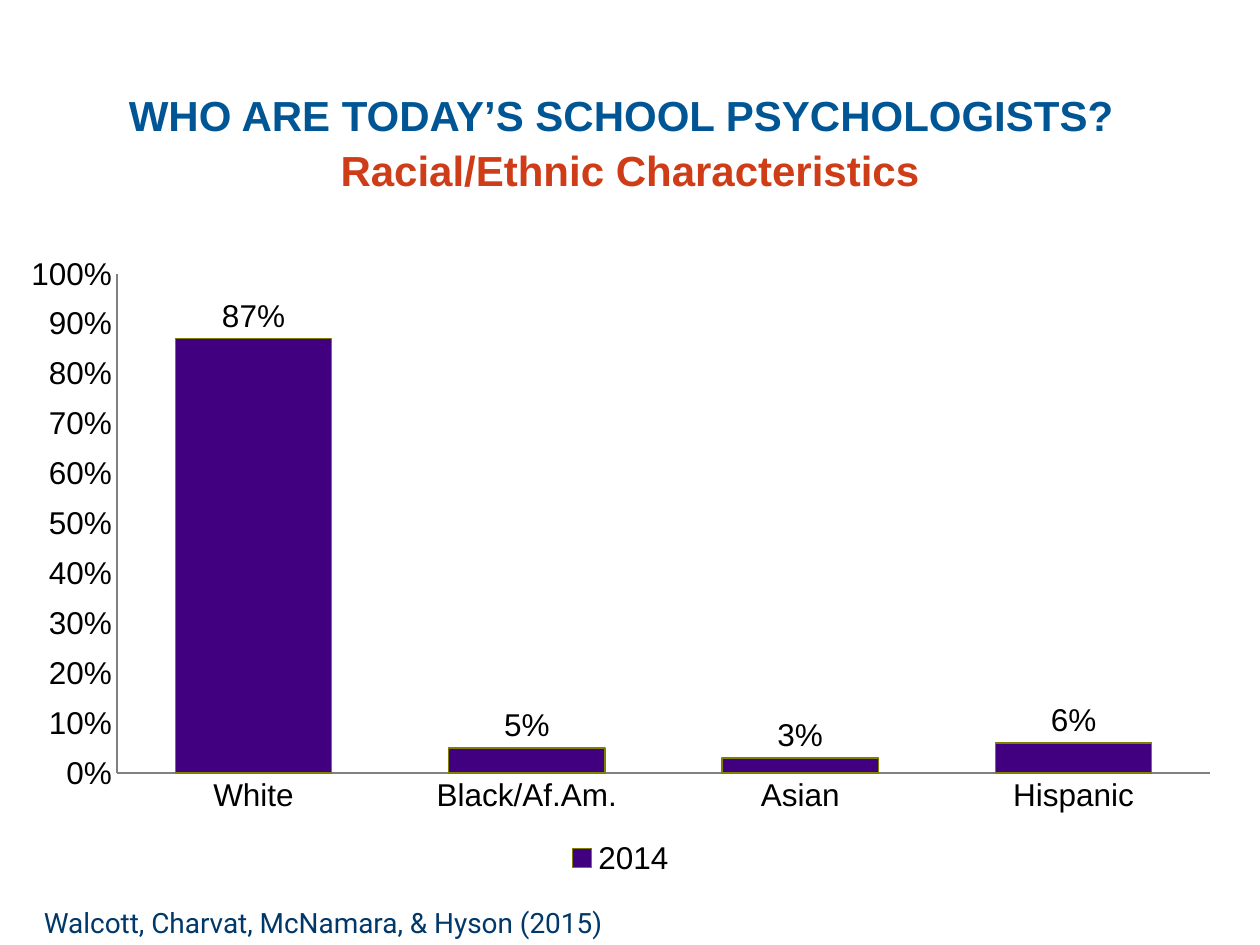
from lxml import etree
from pptx import Presentation
from pptx.chart.data import CategoryChartData
from pptx.dml.color import RGBColor
from pptx.enum import chart as c, text as t
from pptx.oxml import ns
from pptx.util import Inches, Pt

BLUE = RGBColor(0x00, 0x56, 0x95)
ORANGE = RGBColor(0xCE, 0x3C, 0x18)
NAVY = RGBColor(0x00, 0x38, 0x6A)
PURPLE = RGBColor(0x40, 0x00, 0x80)
OLIVE = RGBColor(0x80, 0x80, 0x00)
GRAY = RGBColor(0x80, 0x80, 0x80)
BLACK = RGBColor(0, 0, 0)

HEADING = "WHO ARE TODAY’S SCHOOL PSYCHOLOGISTS?"
SUBHEADING = "Racial/Ethnic Characteristics"
CITATION = "Walcott, Charvat, McNamara, & Hyson (2015)"
YEAR = "2014"
SHARES = {"White": 0.87, "Black/Af.Am.": 0.05, "Asian": 0.03, "Hispanic": 0.06}
PLOT_AREA = {"x": 0.09, "y": 0.05, "w": 0.89, "h": 0.78}


def style(font, size, color, name="Arial", bold=False):
    font.size, font.name, font.bold = Pt(size), name, bold
    font.color.rgb = color


def place(shape, left, top, width, height):
    shape.left, shape.top = Inches(left), Inches(top)
    shape.width, shape.height = Inches(width), Inches(height)


def add_title(slide):
    title = slide.shapes.title
    place(title, 0.5, 0.42, 9, 1.25)
    frame = title.text_frame
    frame.vertical_anchor = t.MSO_ANCHOR.MIDDLE
    frame.auto_size = t.MSO_AUTO_SIZE.NONE
    frame.text = ""
    paragraph = frame.paragraphs[0]
    paragraph.alignment = t.PP_ALIGN.CENTER
    for wording, size, color in ((HEADING, 24, BLUE), (" ", 36, BLUE), (SUBHEADING, 24, ORANGE)):
        if wording == SUBHEADING:
            paragraph.add_line_break()
        run = paragraph.add_run()
        run.text = wording
        style(run.font, size, color, bold=True)


def set_plot_area(chart):
    plot_area = chart._chartSpace.chart.plotArea
    for old in plot_area.findall(ns.qn("c:layout")):
        plot_area.remove(old)
    layout = etree.Element(ns.qn("c:layout"))
    plot_area.insert(0, layout)
    manual = etree.SubElement(layout, ns.qn("c:manualLayout"))
    settings = {"layoutTarget": "inner", "xMode": "edge", "yMode": "edge", **PLOT_AREA}
    for tag, value in settings.items():
        etree.SubElement(manual, ns.qn(f"c:{tag}")).set("val", str(value))


def add_share_chart(slide):
    data = CategoryChartData(number_format="0%")
    data.categories = list(SHARES)
    data.add_series(YEAR, list(SHARES.values()))
    chart = slide.shapes.add_chart(
        c.XL_CHART_TYPE.COLUMN_CLUSTERED,
        Inches(0.05), Inches(1.92), Inches(9.75), Inches(5.08), data).chart
    style(chart.font, 18, BLACK)
    chart.has_title = False
    chart.has_legend = True
    chart.legend.position = c.XL_LEGEND_POSITION.BOTTOM
    chart.legend.include_in_layout = False

    for axis in (chart.category_axis, chart.value_axis):
        axis.major_tick_mark = axis.minor_tick_mark = c.XL_TICK_MARK.NONE
        axis.has_major_gridlines = False
        axis.format.line.color.rgb = GRAY
    value_axis = chart.value_axis
    value_axis.minimum_scale, value_axis.maximum_scale = 0, 1
    value_axis.major_unit = 0.1
    value_axis.tick_labels.number_format = "0%"
    value_axis.tick_labels.number_format_is_linked = False

    plot = chart.plots[0]
    plot.gap_width = 75
    plot.vary_by_categories = False
    series = plot.series[0]
    series.format.fill.solid()
    series.format.fill.fore_color.rgb = PURPLE
    series.format.line.color.rgb = OLIVE
    series.format.line.width = Pt(0.75)
    labels = series.data_labels
    labels.show_value = True
    labels.number_format = "0%"
    labels.number_format_is_linked = False
    labels.position = c.XL_LABEL_POSITION.OUTSIDE_END
    style(labels.font, 18, BLACK)
    set_plot_area(chart)


def add_citation(slide):
    box = slide.shapes.add_textbox(Inches(0.25), Inches(6.86), Inches(7.08), Inches(0.64))
    frame = box.text_frame
    frame.word_wrap = True
    frame.vertical_anchor = t.MSO_ANCHOR.BOTTOM
    frame.text = CITATION
    style(frame.paragraphs[0].runs[0].font, 16, NAVY, name="Roboto")


def main():
    presentation = Presentation()
    presentation.slide_width, presentation.slide_height = Inches(10), Inches(7.5)
    slide = presentation.slides.add_slide(presentation.slide_layouts.get_by_name("Title Only"))
    add_title(slide)
    add_share_chart(slide)
    add_citation(slide)
    presentation.save("out.pptx")


if __name__ == "__main__":
    main()
